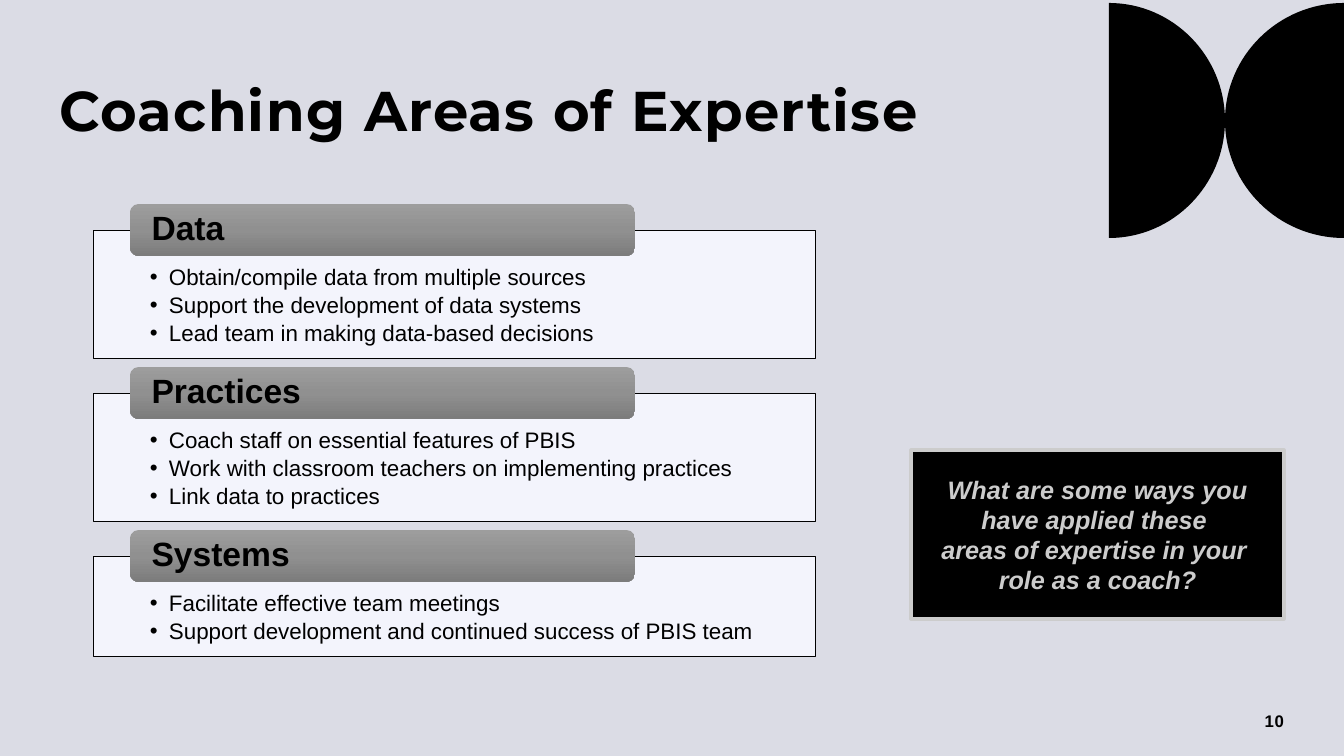
from copy import deepcopy
from dataclasses import dataclass

from lxml import etree
from pptx import Presentation
from pptx import util as u
from pptx.dml.color import RGBColor
from pptx.enum import shapes, text
from pptx.oxml.ns import qn

SLIDE_WIDTH, SLIDE_HEIGHT = 1344, 756
EMU_PER_PX = 12192000 / SLIDE_WIDTH
ARC_HANDLE = 0.55


@dataclass(frozen=True)
class Theme:
    background: str = "DBDCE5"
    ink: str = "000000"
    panel: str = "F6F7FF"
    panel_alpha: int = 90
    tab_stops: tuple = ((0, "9D9D9D"), (0.5, "909090"), (1, "7C7C7C"))
    callout: str = "CCCCCC"
    title_font: str = "Montserrat"
    body_font: str = "Arial"
    title_size: int = 40
    tab_size: int = 24
    callout_size: int = 18
    body_size: int = 16
    number_size: int = 12


THEME = Theme()

SECTIONS = (
    ("Data", ("Obtain/compile data from multiple sources",
              "Support the development of data systems",
              "Lead team in making data-based decisions")),
    ("Practices", ("Coach staff on essential features of PBIS",
                   "Work with classroom teachers on implementing practices",
                   "Link data to practices")),
    ("Systems", ("Facilitate effective team meetings",
                 "Support development and continued success of PBIS team")),
)
QUESTION = ("What are some ways you have applied these ",
            "areas of expertise in your ",
            "role as a coach?")


def px(length):
    return u.Emu(round(length * EMU_PER_PX))


def rgb(value):
    return RGBColor.from_string(value)


def add_box(page, kind, left, top, width, height, fill=None, line=None, line_width=1):
    box = page.shapes.add_shape(kind, px(left), px(top), px(width), px(height))
    box.shadow.inherit = False
    if fill:
        box.fill.solid()
        box.fill.fore_color.rgb = rgb(fill)
    if line:
        box.line.color.rgb = rgb(line)
        box.line.width = u.Pt(line_width)
    else:
        box.line.fill.background()
    return box


def add_text_box(page, left, top, width, height):
    return page.shapes.add_textbox(px(left), px(top), px(width), px(height))


def add_bullet(para, indent):
    properties = para._p.get_or_add_pPr()
    properties.set("marL", str(px(indent)))
    properties.set("indent", str(-px(indent)))
    etree.SubElement(properties, qn("a:buFont"), typeface=THEME.body_font)
    etree.SubElement(properties, qn("a:buChar"), char="•")


def write(box, lines, size, font=THEME.body_font, color=THEME.ink, bold=False,
          italic=False, align=text.PP_ALIGN.LEFT, anchor=text.MSO_ANCHOR.MIDDLE,
          insets=(0, 0, 0, 0), line_spacing=None, space_after=None,
          bullet_indent=0, tracking=0):
    """Write one paragraph per line; insets run left, top, right, bottom in px."""
    frame = box.text_frame
    frame.word_wrap = True
    frame.vertical_anchor = anchor
    (frame.margin_left, frame.margin_top,
     frame.margin_right, frame.margin_bottom) = map(px, insets)
    for index, line in enumerate(lines):
        para = frame.paragraphs[0] if index == 0 else frame.add_paragraph()
        if bullet_indent:
            add_bullet(para, bullet_indent)
        para.alignment = align
        if line_spacing:
            para.line_spacing = line_spacing
        if space_after:
            para.space_after = u.Pt(space_after)
        span = para.add_run()
        span.text = line
        span.font.name = font
        span.font.size = u.Pt(size)
        span.font.bold = bold
        span.font.italic = italic
        span.font.color.rgb = rgb(color)
        if tracking:
            span._r.get_or_add_rPr().set("spc", str(round(tracking * 100)))


def fill_with_gradient(box, stops):
    box.fill.gradient()
    box.fill.gradient_angle = 270
    stop_list = box._element.spPr.find(qn("a:gradFill")).find(qn("a:gsLst"))
    while len(stop_list) < len(stops):
        stop_list.append(deepcopy(stop_list[0]))
    for stop, (position, color) in zip(box.fill.gradient_stops, stops):
        stop.position = position
        stop.color.rgb = rgb(color)


def set_alpha(box, percent):
    color = box._element.spPr.find(qn("a:solidFill"))[0]
    etree.SubElement(color, qn("a:alpha"), val=str(percent * 1000))


def bend(segment, handles):
    """Turn a straight freeform segment into a curve with two handles in px."""
    segment.tag = qn("a:cubicBezTo")
    for index, (x, y) in enumerate(handles):
        handle = etree.Element(qn("a:pt"), x=str(px(x)), y=str(px(y)))
        segment.insert(index, handle)


def draw_half_disc(page, flat_x, tip_x, top, height):
    """Draw a half disc whose straight side is at flat_x and whose arc reaches tip_x."""
    radius = height / 2
    builder = page.shapes.build_freeform(px(flat_x), px(top))
    builder.add_line_segments([(px(tip_x), px(top + radius)),
                               (px(flat_x), px(top + height))], close=True)
    disc = builder.convert_to_shape()
    left = min(flat_x, tip_x)
    flat, tip = flat_x - left, tip_x - left
    shoulder = flat + (tip - flat) * ARC_HANDLE
    rise = radius * ARC_HANDLE
    upper, lower = list(disc._element.iter(qn("a:lnTo")))[:2]
    bend(upper, [(shoulder, 0), (tip, radius - rise)])
    bend(lower, [(tip, radius + rise), (shoulder, height)])
    disc.shadow.inherit = False
    disc.fill.solid()
    disc.fill.fore_color.rgb = rgb(THEME.ink)
    disc.line.fill.background()


def draw_corner(page, left, top, width, height):
    middle = left + 116
    draw_half_disc(page, left, middle, top, height)
    draw_half_disc(page, left + width, middle, top, height)


def draw_section(page, heading, items, left, top, width, height):
    panel = add_box(page, shapes.MSO_SHAPE.RECTANGLE, left, top, width, height,
                    THEME.panel, THEME.ink, 0.5)
    set_alpha(panel, THEME.panel_alpha)
    write(panel, items, THEME.body_size, anchor=text.MSO_ANCHOR.TOP,
          insets=(57, 36, 56, 12), line_spacing=0.9, space_after=2.8,
          bullet_indent=19)
    tab = add_box(page, shapes.MSO_SHAPE.ROUNDED_RECTANGLE,
                  left + 37, top - 26, 505, 52)
    fill_with_gradient(tab, THEME.tab_stops)
    write(tab, [heading], THEME.tab_size, bold=True,
          insets=(19, 0, 19, 0), line_spacing=0.9)


def draw_sections(page, left, top, width, gap=35):
    for heading, items in SECTIONS:
        height = 44 + 28 * len(items)
        draw_section(page, heading, items, left, top, width, height)
        top += height + gap


def draw_title(page, left, top, width, height):
    write(add_text_box(page, left, top, width, height),
          ["Coaching Areas of Expertise"], THEME.title_size, THEME.title_font,
          bold=True, anchor=text.MSO_ANCHOR.TOP, line_spacing=0.9, tracking=1)


def draw_question(page, left, top, width, height):
    box = add_box(page, shapes.MSO_SHAPE.RECTANGLE, left, top, width, height,
                  THEME.ink, THEME.callout, 2.25)
    write(box, QUESTION, THEME.callout_size, color=THEME.callout, bold=True,
          italic=True, align=text.PP_ALIGN.CENTER, insets=(10, 5, 10, 5))


def draw_page_number(page, left, top, width, height):
    write(add_text_box(page, left, top, width, height), ["10"], THEME.number_size,
          bold=True, align=text.PP_ALIGN.RIGHT, tracking=0.5)


def main():
    deck = Presentation()
    deck.slide_width, deck.slide_height = px(SLIDE_WIDTH), px(SLIDE_HEIGHT)
    page = deck.slides.add_slide(deck.slide_layouts[6])
    page.background.fill.solid()
    page.background.fill.fore_color.rgb = rgb(THEME.background)
    draw_corner(page, 1109, 3, 235, 235)
    draw_title(page, 59, 83, 959, 106)
    draw_sections(page, 93, 230, 722)
    draw_question(page, 911, 450, 373, 169)
    draw_page_number(page, 982, 701, 302, 40)
    deck.save("out.pptx")


if __name__ == "__main__":
    main()
